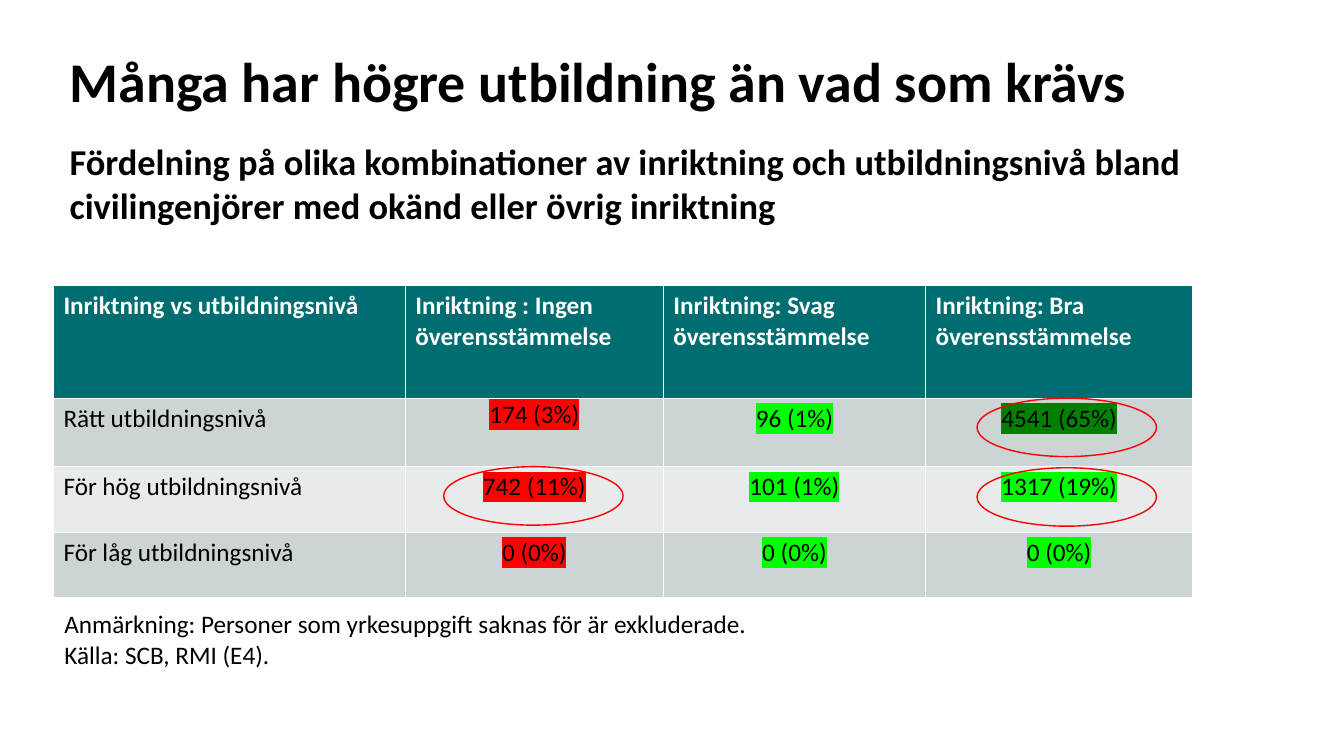
from lxml import etree
from pptx import Presentation
from pptx.dml.color import RGBColor
from pptx.enum import shapes, text
from pptx.oxml.ns import qn
from pptx.util import Inches, Pt

FONT = "Calibri"
BLACK, WHITE, TEAL = "000000", "FFFFFF", "006D71"
RED, LIME, GREEN = "FF0000", "00FF00", "008000"
BANDS = ["CCD4D5", "E7EBEB"]

TITLE = "Många har högre utbildning än vad som krävs"
SUBTITLE = ("Fördelning på olika kombinationer av inriktning och utbildningsnivå "
            "bland civilingenjörer med okänd eller övrig inriktning")
NOTES = ["Anmärkning: Personer som yrkesuppgift saknas för är exkluderade.",
         "Källa: SCB, RMI (E4)."]
ROWS = [
    ["Inriktning vs utbildningsnivå", "Inriktning : Ingen överensstämmelse",
     "Inriktning: Svag överensstämmelse", "Inriktning: Bra överensstämmelse"],
    ["Rätt utbildningsnivå", "174 (3%)", "96 (1%)", "4541 (65%)"],
    ["För hög utbildningsnivå", "742 (11%)", "101 (1%)", "1317 (19%)"],
    ["För låg utbildningsnivå", "0 (0%)", "0 (0%)", "0 (0%)"],
]
HIGHLIGHTS = [None, RED, LIME, LIME]
STRONGEST_CELL = (1, 3)
TIGHT_CELL = (1, 1)
COLUMN_WIDTHS = [3.49, 2.56, 2.6, 2.65]
ROW_HEIGHTS = [1.12, 0.68, 0.65, 0.65]
TABLE_LEFT, TABLE_TOP = 0.53, 2.83
RING_WIDTH, RING_HEIGHT = 1.78, 0.58
RINGS = [(9.69, 3.95), (4.4, 4.63), (9.69, 4.64)]


def color(value):
    return RGBColor.from_string(value)


def format_text(frame, size, value, bold=False):
    for paragraph in frame.paragraphs:
        for run in paragraph.runs:
            run.font.size = Pt(size)
            run.font.name = FONT
            run.font.bold = bold
            run.font.color.rgb = color(value)


def remove_insets(frame):
    frame.margin_left = frame.margin_right = 0
    frame.margin_top = frame.margin_bottom = 0


def highlight(run, value):
    """Mark a formatted run with a background colour."""
    mark = etree.Element(qn("a:highlight"))
    etree.SubElement(mark, qn("a:srgbClr")).set("val", value)
    run.font._element.find(qn("a:latin")).addprevious(mark)


def add_headings(slide):
    title = slide.shapes.title
    title.left, title.top = Inches(0.69), Inches(0)
    title.width, title.height = Inches(12.15), Inches(1.14)
    frame = title.text_frame
    frame.text = TITLE
    remove_insets(frame)
    frame.vertical_anchor = text.MSO_ANCHOR.BOTTOM
    frame.paragraphs[0].alignment = text.PP_ALIGN.LEFT
    frame.paragraphs[0].line_spacing = 0.9
    format_text(frame, 40, BLACK, bold=True)

    subtitle = slide.shapes.add_textbox(
        Inches(0.69), Inches(1.38), Inches(11.3), Inches(1.35))
    frame = subtitle.text_frame
    frame.word_wrap = True
    frame.text = SUBTITLE
    remove_insets(frame)
    format_text(frame, 26, BLACK, bold=True)


def add_match_table(slide):
    table = slide.shapes.add_table(
        len(ROWS), len(COLUMN_WIDTHS), Inches(TABLE_LEFT), Inches(TABLE_TOP),
        Inches(sum(COLUMN_WIDTHS)), Inches(sum(ROW_HEIGHTS))).table
    for column, width in zip(table.columns, COLUMN_WIDTHS):
        column.width = Inches(width)
    for row, height in zip(table.rows, ROW_HEIGHTS):
        row.height = Inches(height)

    for r, values in enumerate(ROWS):
        is_header = r == 0
        for c, value in enumerate(values):
            cell = table.cell(r, c)
            cell.text = value
            cell.fill.solid()
            cell.fill.fore_color.rgb = color(TEAL if is_header else BANDS[(r - 1) % 2])
            format_text(cell.text_frame, 18, WHITE if is_header else BLACK, is_header)
            if not is_header and c > 0:
                paragraph = cell.text_frame.paragraphs[0]
                paragraph.alignment = text.PP_ALIGN.CENTER
                mark = GREEN if (r, c) == STRONGEST_CELL else HIGHLIGHTS[c]
                highlight(paragraph.runs[0], mark)

    tight = table.cell(*TIGHT_CELL)
    tight.margin_left = tight.margin_right = tight.margin_top = Inches(0.01)
    tight.margin_bottom = 0


def add_notes(slide):
    box = slide.shapes.add_textbox(
        Inches(0.54), Inches(5.99), Inches(7.04), Inches(0.71))
    frame = box.text_frame
    frame.word_wrap = False
    frame.auto_size = text.MSO_AUTO_SIZE.SHAPE_TO_FIT_TEXT
    frame.text = "\n".join(NOTES)
    format_text(frame, 18, BLACK)


def add_rings(slide):
    for left, top in RINGS:
        ring = slide.shapes.add_shape(
            shapes.MSO_SHAPE.OVAL, Inches(left), Inches(top),
            Inches(RING_WIDTH), Inches(RING_HEIGHT))
        ring.shadow.inherit = False
        ring.fill.background()
        ring.line.color.rgb = color(RED)
        ring.line.width = Pt(1)


def main():
    presentation = Presentation()
    presentation.slide_width = Inches(13.33)
    presentation.slide_height = Inches(7.5)
    slide = presentation.slides.add_slide(presentation.slide_layouts[5])
    add_headings(slide)
    add_match_table(slide)
    add_notes(slide)
    add_rings(slide)
    presentation.save("out.pptx")


if __name__ == "__main__":
    main()
